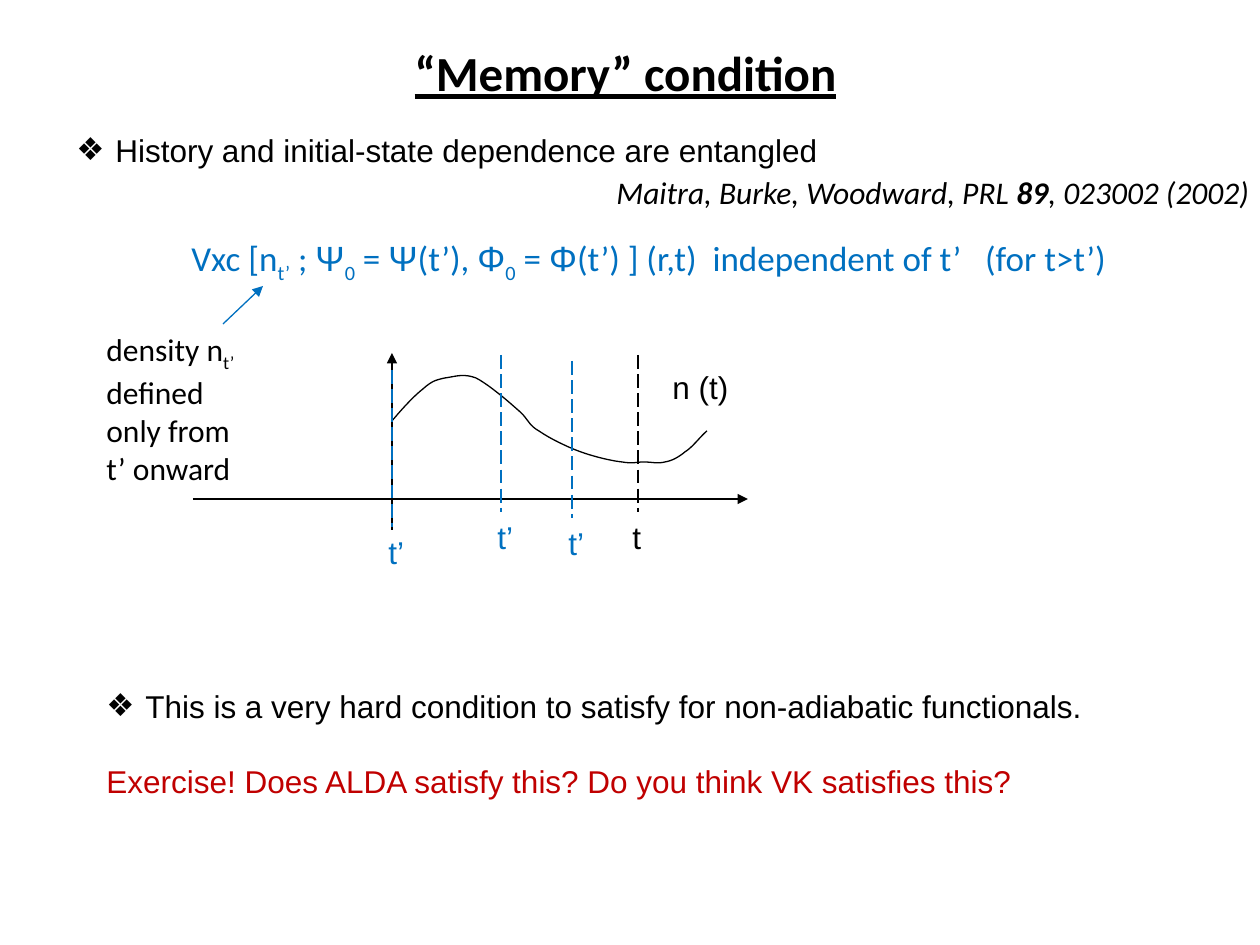
import pptx
import pptx.util
import pptx.dml.color
import pptx.enum.dml
import pptx.enum.shapes
import pptx.enum.text
import pptx.oxml
import pptx.oxml.ns

PX = 914400 / 126
COLORS = {"black": "000000", "blue": "0070C0", "red": "C00000"}
CURVE = [
    (392, 421), (403, 408), (414, 396), (423, 389), (432, 381), (436, 380), (445, 378),
    (454, 377), (463, 373), (476, 378), (488, 384), (508, 401), (518, 410), (528, 418),
    (528, 425), (539, 431), (549, 438), (567, 447), (581, 452), (595, 457), (612, 461),
    (622, 462), (634, 464), (636, 462), (644, 462), (651, 462), (658, 464), (665, 462),
    (672, 461), (679, 457), (685, 452), (693, 447), (699, 438), (707, 431),
]


def px(n):
    return pptx.util.Emu(round(n * PX))


def rgb(color):
    return pptx.dml.color.RGBColor.from_string(COLORS[color])


def add_run(p, text, font="Arial", size=18, color="black", bold=False, italic=False, sub=False):
    r = p.add_run()
    r.text = text
    r.font.name = font
    r.font.size = pptx.util.Pt(size)
    r.font.color.rgb = rgb(color)
    r.font.bold = bold
    r.font.italic = italic
    if sub:
        r.font._element.set("baseline", "-25000")
    return r


def add_bullet(p):
    pPr = p._p.get_or_add_pPr()
    pPr.set("marL", str(px(39)))
    pPr.set("indent", str(-px(39)))
    ns = pptx.oxml.ns.nsdecls("a")
    pPr.append(pptx.oxml.parse_xml(f'<a:buFont {ns} typeface="Arial"/>'))
    pPr.append(pptx.oxml.parse_xml(f'<a:buChar {ns} char="❖"/>'))


def add_box(s, left, top, width, height, wrap=True):
    tf = s.shapes.add_textbox(px(left), px(top), px(width), px(height)).text_frame
    tf.word_wrap = wrap
    return tf


def add_label(s, text, left, top, width, color="black"):
    tf = add_box(s, left, top, width, 50, wrap=False)
    add_run(tf.paragraphs[0], text, color=color)


def add_line(s, start, end, color="black", width=0.75, arrow=False, dash=False):
    sp = s.shapes.add_connector(
        pptx.enum.shapes.MSO_CONNECTOR.STRAIGHT, px(start[0]), px(start[1]), px(end[0]), px(end[1]))
    sp.line.color.rgb = rgb(color)
    sp.line.width = pptx.util.Pt(width)
    if dash:
        sp.line.dash_style = pptx.enum.dml.MSO_LINE.LONG_DASH
    ns = pptx.oxml.ns.nsdecls("a")
    if arrow:
        sp.line._get_or_add_ln().append(pptx.oxml.parse_xml(f'<a:tailEnd {ns} type="triangle"/>'))
    sp._element.spPr.append(pptx.oxml.parse_xml(f"<a:effectLst {ns}/>"))


def bezier(a, b, c, d, t):
    u = 1 - t
    return tuple(
        px(u**3 * i + 3 * u * u * t * j + 3 * u * t * t * k + t**3 * m)
        for i, j, k, m in zip(a, b, c, d))


def add_density_curve(s, knots, steps=10):
    points = [
        bezier(*knots[i:i + 4], n / steps)
        for i in range(0, len(knots) - 1, 3) for n in range(1, steps + 1)]
    builder = s.shapes.build_freeform(px(knots[0][0]), px(knots[0][1]))
    builder.add_line_segments(points, close=False)
    sp = builder.convert_to_shape()
    sp.shadow.inherit = False
    sp.fill.background()
    sp.line.color.rgb = rgb("black")
    sp.line.width = pptx.util.Pt(0.75)


def add_title(s, text):
    sp = s.shapes.title
    sp.left, sp.top, sp.width, sp.height = px(253), px(36), px(745), px(72)
    tf = sp.text_frame
    tf.vertical_anchor = pptx.enum.text.MSO_ANCHOR.TOP
    p = tf.paragraphs[0]
    p.alignment = pptx.enum.text.PP_ALIGN.CENTER
    add_run(p, text, "Calibri", 28, bold=True).font.underline = True


def add_formula(s):
    p = add_box(s, 179, 230, 988, 55).paragraphs[0]
    add_run(p, "Vxc [n", "Calibri", 20, "blue")
    add_run(p, "t’", "Calibri", 20, "blue", sub=True)
    add_run(p, " ; ", "Calibri", 20, "blue")
    for letter, after in (("Ψ", "(t’), "), ("Φ", "(t’) ] (r,t)  independent of t’   (for t>t’)")):
        add_run(p, letter, "Arial", 20, "blue")
        add_run(p, "0", "Calibri", 20, "blue", sub=True)
        add_run(p, " = ", "Calibri", 20, "blue")
        add_run(p, letter, "Arial", 20, "blue")
        add_run(p, after, "Calibri", 20, "blue")


def add_density_note(s):
    p = add_box(s, 94, 324, 159, 165).paragraphs[0]
    add_run(p, "density n", "Calibri")
    add_run(p, "t’", "Calibri", sub=True)
    add_run(p, " defined only from t’ onward", "Calibri")
    add_line(s, (223, 324), (263, 286), "blue", arrow=True)


def add_graph(s):
    add_line(s, (392, 530), (392, 353), arrow=True)
    add_line(s, (193, 499), (748, 499), arrow=True)
    add_density_curve(s, CURVE)
    add_label(s, "n (t)", 660, 362, 82)
    add_line(s, (638, 355), (638, 512), width=1, dash=True)
    add_label(s, "t", 620, 512, 30)
    for x, top in ((392, 370), (501, 355), (572, 361)):
        add_line(s, (x, top), (x, top + 157), "blue", 1, dash=True)
        add_label(s, "t’", x - 16, top + 157, 44, "blue")


def add_citation(s):
    p = add_box(s, 604, 167, 697, 50).paragraphs[0]
    add_run(p, "Maitra, Burke, Woodward, PRL ", "Calibri", italic=True)
    add_run(p, "89", "Calibri", bold=True, italic=True)
    add_run(p, ", 023002 (2002)", "Calibri", italic=True)


def add_conclusion(s):
    tf = add_box(s, 94, 681, 1071, 127)
    p = tf.paragraphs[0]
    add_bullet(p)
    add_run(p, "This is a very hard condition to satisfy for non-adiabatic functionals.")
    p = tf.add_paragraph()
    p.space_before = pptx.util.Pt(21)
    add_run(p, "Exercise! Does ALDA satisfy this? Do you think VK satisfies this?", color="red")


def main():
    prs = pptx.Presentation()
    prs.slide_width, prs.slide_height = px(1260), px(945)
    s = prs.slides.add_slide(prs.slide_layouts[5])
    add_title(s, "“Memory” condition")
    p = add_box(s, 64, 125, 1071, 50).paragraphs[0]
    add_bullet(p)
    add_run(p, "History and initial-state dependence are entangled")
    add_citation(s)
    add_formula(s)
    add_density_note(s)
    add_graph(s)
    add_conclusion(s)
    prs.save("out.pptx")


if __name__ == "__main__":
    main()
